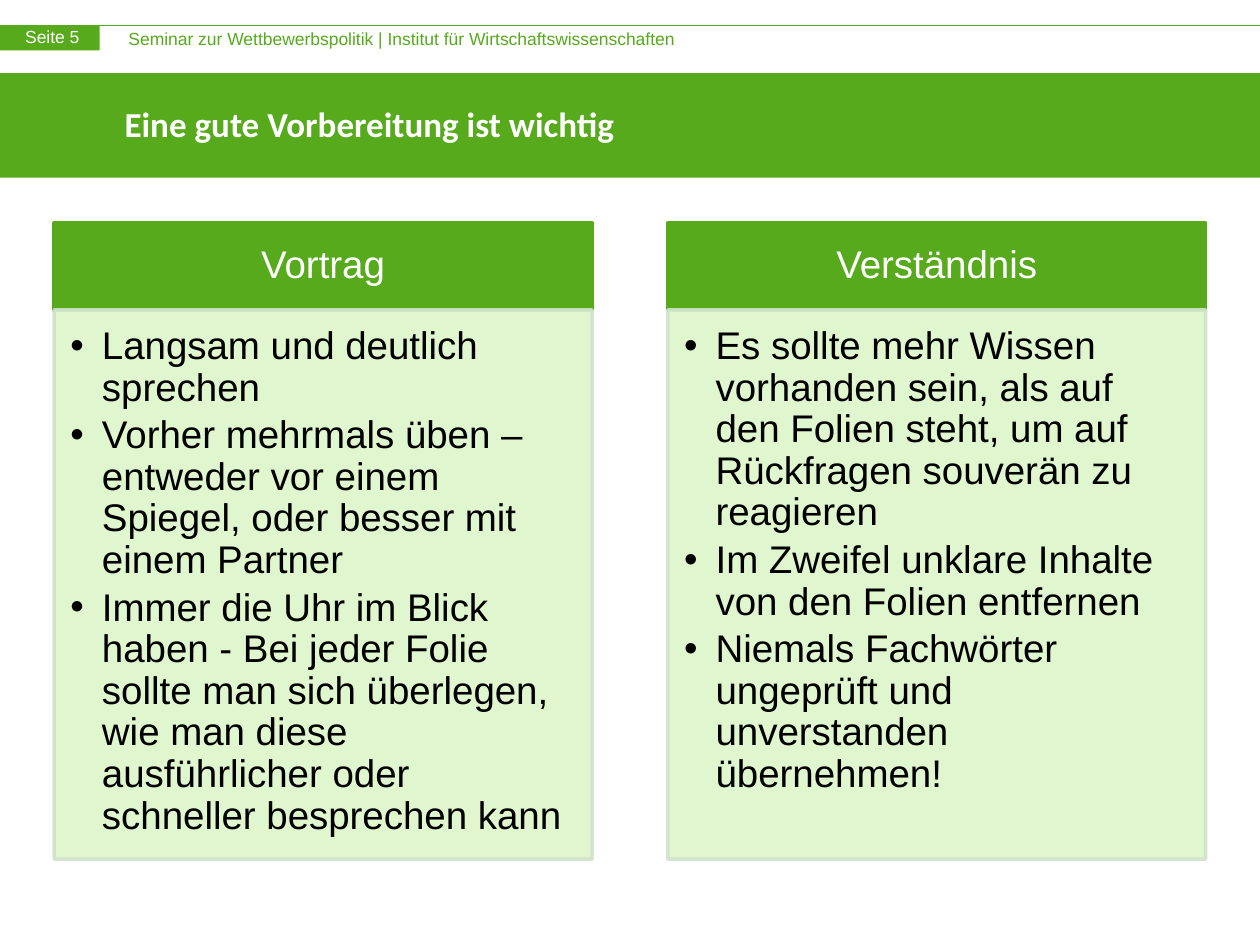
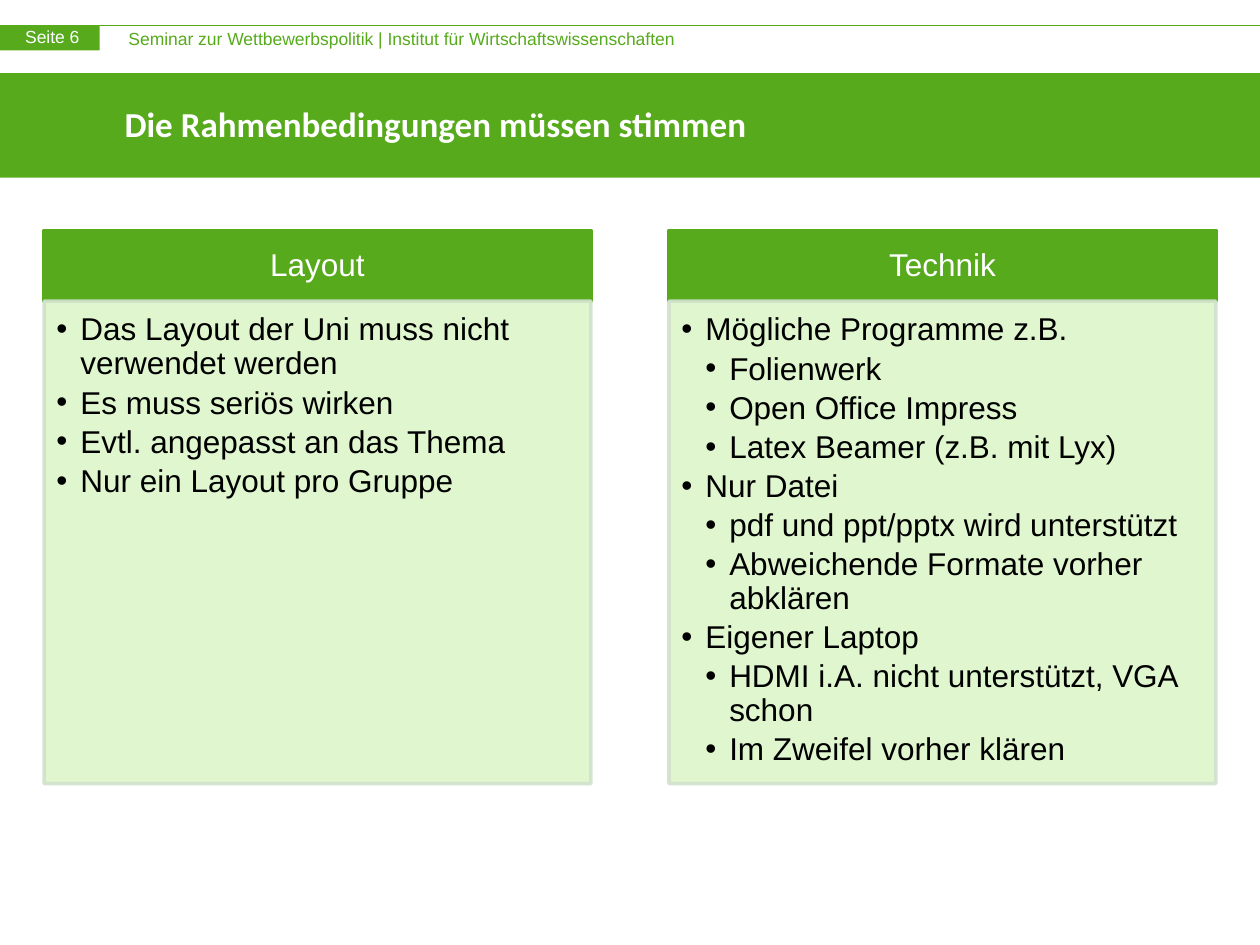
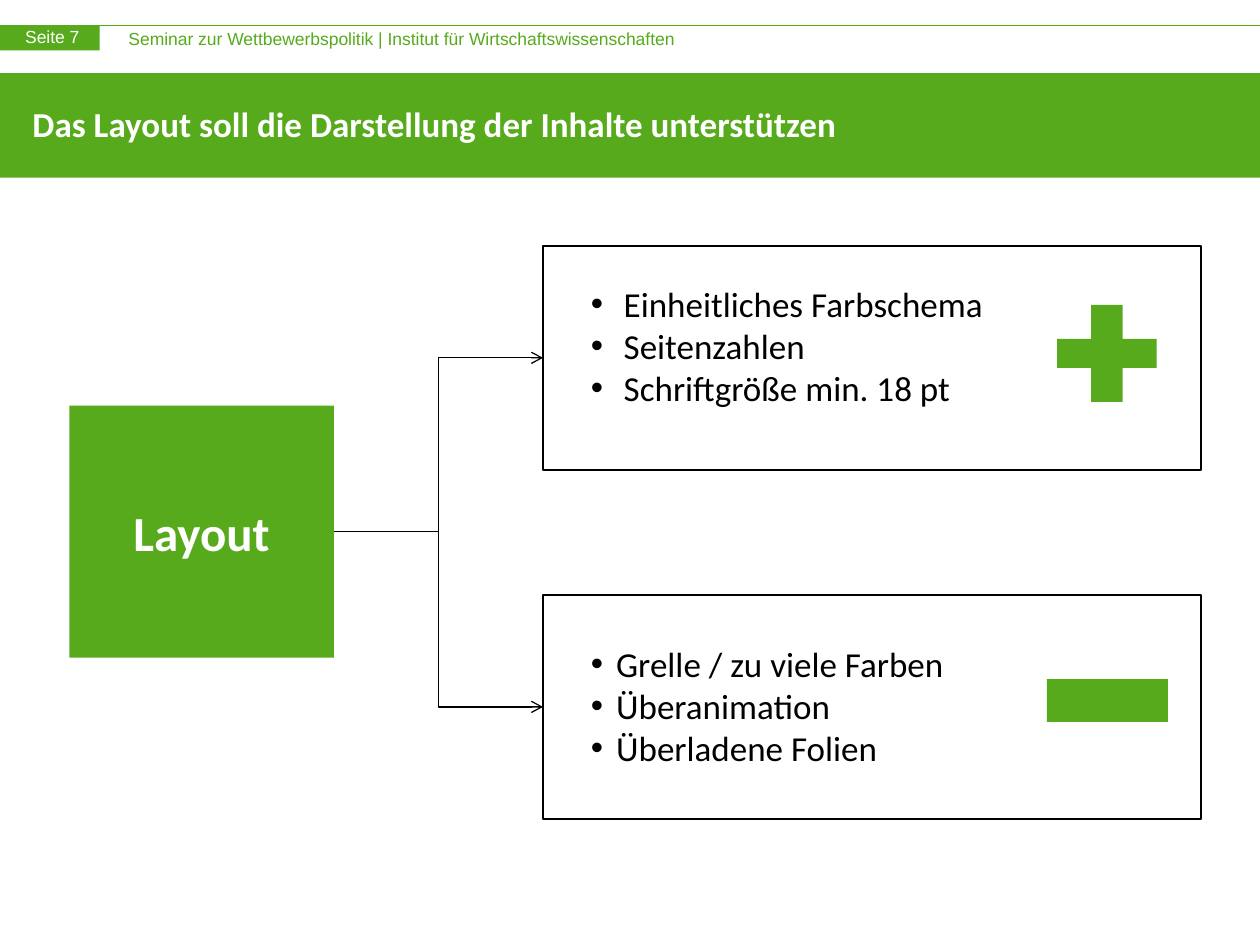
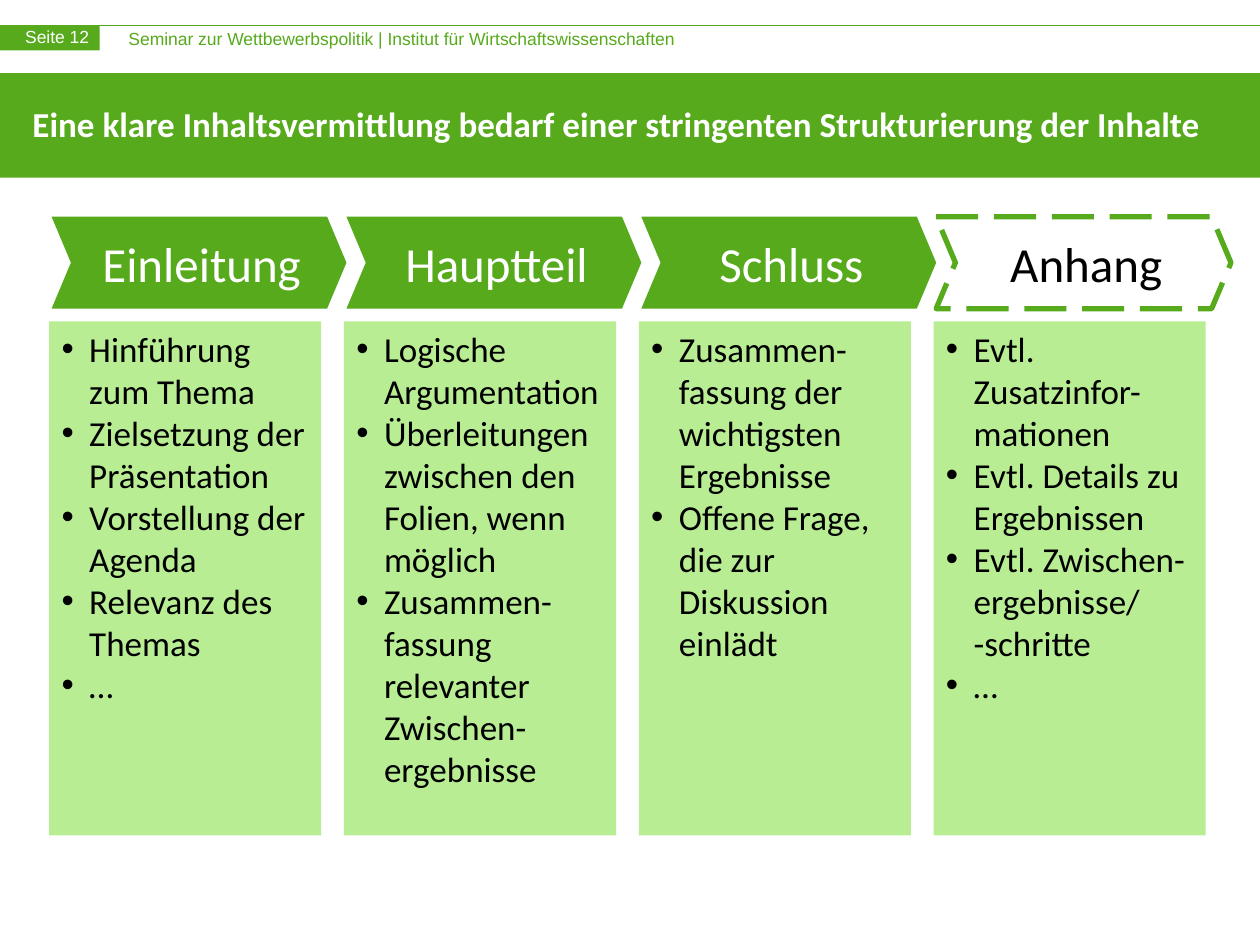
from lxml.etree import SubElement as Sub
from pptx import Presentation
from pptx.dml.color import RGBColor as Rgb
from pptx.enum.dml import MSO_LINE as Dash
from pptx.enum.shapes import MSO_CONNECTOR as Conn, MSO_SHAPE as Kind
from pptx.enum.text import MSO_ANCHOR as Anchor, MSO_AUTO_SIZE as Auto, PP_ALIGN as Align
from pptx.oxml.ns import qn
from pptx.util import Pt

PX = 9144
WIDE, HIGH = 1000, 750
HUES = {
    "green": "56AA1C", "pale": "DCF6C9", "edge": "D1E2CD",
    "lime": "B8ED94", "white": "FFFFFF", "black": "000000",
}
FOOT = "Seminar zur Wettbewerbspolitik | Institut für Wirtschaftswissenschaften"
SANS, HEAD = "Arial", "Calibri"


def emu(*nums):
    return [round(n * PX) for n in nums]


def hue(name):
    return Rgb.from_string(HUES[name])


def fade(node, part):
    tone = next(node.iter(qn("a:srgbClr")))
    Sub(tone, qn("a:alpha"), val=str(part * 1000))


def shape(slide, box, fill=None, line=None, width=1, kind=Kind.RECTANGLE):
    item = slide.shapes.add_shape(kind, *emu(*box))
    item.shadow.inherit = False
    if fill:
        item.fill.solid()
        item.fill.fore_color.rgb = hue(fill)
    else:
        item.fill.background()
    if line:
        item.line.color.rgb = hue(line)
        item.line.width = Pt(width)
    else:
        item.line.fill.background()
    return item


def link(slide, kind, start, end, tone):
    item = slide.shapes.add_connector(kind, *emu(*start, *end))
    item.line.color.rgb = hue(tone)
    item.line.width = Pt(0.75)
    Sub(item._element.spPr, qn("a:effectLst"))
    return item


def bullet(par, left, hang):
    props = par._p.get_or_add_pPr()
    props.set("marL", str(left * PX))
    props.set("indent", str(-hang * PX))
    Sub(props, qn("a:buFont"), typeface=SANS)
    Sub(props, qn("a:buChar"), char="•")


def write(item, lines, size, tone, font, pad=(0, 0, 0, 0), bold=False,
          align=Align.LEFT, anchor=Anchor.TOP, hang=0, space=None, after=0):
    frame = item.text_frame
    frame.word_wrap = True
    frame.vertical_anchor = anchor
    (frame.margin_left, frame.margin_top,
     frame.margin_right, frame.margin_bottom) = emu(*pad)
    for i, line in enumerate(lines):
        level, text = line if isinstance(line, tuple) else (0, line)
        par = frame.paragraphs[0] if i == 0 else frame.add_paragraph()
        par.text = text
        if hang:
            bullet(par, hang * max(level, 1), hang)
        par.level = level
        par.alignment = align
        if space:
            par.line_spacing = space
        if after:
            par.space_after = Pt(after)
        for run in par.runs:
            run.font.size = Pt(size)
            run.font.name = font
            run.font.bold = bold
            run.font.color.rgb = hue(tone)


def label(slide, box, lines, size, tone, font, **style):
    item = slide.shapes.add_textbox(*emu(*box))
    write(item, lines, size, tone, font, **style)
    return item


def page(deck, number, title, left):
    slide = deck.slides.add_slide(deck.slide_layouts[6])
    link(slide, Conn.STRAIGHT, (0, 20), (WIDE, 20), "green")
    shape(slide, (0, 20, 79, 20), "green")
    label(slide, (102, 22, 656, 17), [FOOT], 10, "green", SANS)
    label(slide, (20, 21, 62, 33), [f"Seite {number}"], 10, "white", SANS)
    shape(slide, (0, 58, WIDE, 83), "green")
    label(slide, (left, 62, WIDE - left, 72), [title], 20, "white", HEAD,
          pad=(10, 5, 10, 5), bold=True, anchor=Anchor.MIDDLE, space=Pt(24))
    return slide


def panel(slide, box, top, size, pad, hang, name, lines):
    x, y, w, h = box
    head = shape(slide, (x, y, w, top), "green", "green", 2)
    write(head, [name], size, "white", SANS, align=Align.CENTER,
          anchor=Anchor.MIDDLE, space=0.9)
    body = shape(slide, (x, y + top, w, h - top), "pale", "edge", 2)
    fade(body.fill._xPr.find(qn("a:solidFill")), 90)
    fade(body.line._ln, 90)
    write(body, lines, size, "black", SANS, pad=pad, hang=hang,
          space=0.9, after=size * 0.16)


def pair(slide, box, top, size, pad, hang, parts):
    x, y, w, h = box
    for left, (name, lines) in zip((x, WIDE - x - w), parts):
        panel(slide, (left, y, w, h), top, size, pad, hang, name, lines)


def choice(slide, box, root, hang, lines):
    x, y, w, h = box
    frame = shape(slide, box, None, "black")
    drop = (29, 38)[hang == 20]
    text = label(slide, (x + 38, y + drop, w - 61, 101), lines, 20, "black",
                 HEAD, hang=hang)
    text.text_frame.auto_size = Auto.SHAPE_TO_FIT_TEXT
    arm = link(slide, Conn.ELBOW, (265, 422), (x, y + h // 2), "black")
    arm.begin_connect(root, 3)
    arm.end_connect(frame, 1)
    Sub(arm.line._ln, qn("a:tailEnd"), type="arrow")


def tree(slide):
    root = shape(slide, (55, 322, 210, 200), "green")
    write(root, ["Layout"], 28, "white", HEAD, bold=True,
          align=Align.CENTER, anchor=Anchor.MIDDLE)
    choice(slide, (431, 195, 522, 178), root, 26,
           ["Einheitliches Farbschema", "Seitenzahlen", "Schriftgröße min. 18 pt"])
    choice(slide, (431, 472, 522, 178), root, 20,
           ["Grelle / zu viele Farben", "Überanimation", "Überladene Folien"])
    plus = shape(slide, (839, 242, 79, 77), "green", kind=Kind.CROSS)
    plus.adjustments[0] = 0.35
    shape(slide, (831, 539, 96, 34), "green")


def stage(slide, box, name, lines, extra):
    x, y, w, h = box
    body = shape(slide, (x, y + 83, w, h - 83), "lime")
    write(body, lines, 20, "black", HEAD, pad=(10, 5, 10, 5), hang=22)
    fill, line, tone = (None, "green", "black") if extra else ("green", None, "white")
    head = shape(slide, (x + 2, y, w + 18, 73), fill, line, 3, Kind.CHEVRON)
    head.adjustments[0] = 0.21
    if extra:
        head.line.dash_style = Dash.LONG_DASH
    write(head, [name], 28, tone, HEAD, pad=(14, 5, 10, 5),
          align=Align.CENTER, anchor=Anchor.MIDDLE)


def flow(slide, parts):
    for i, (name, lines) in enumerate(parts):
        stage(slide, (39 + 234 * i, 172, 216, 491), name, lines, name == "Anhang")


TALK = [
    ("Vortrag", [
        (1, "Langsam und deutlich sprechen"),
        (1, "Vorher mehrmals üben – entweder vor einem Spiegel, oder besser mit einem Partner"),
        (1, "Immer die Uhr im Blick haben - Bei jeder Folie sollte man sich überlegen, "
            "wie man diese ausführlicher oder schneller besprechen kann"),
    ]),
    ("Verständnis", [
        (1, "Es sollte mehr Wissen vorhanden sein, als auf den Folien steht, "
            "um auf Rückfragen souverän zu reagieren"),
        (1, "Im Zweifel unklare Inhalte von den Folien entfernen"),
        (1, "Niemals Fachwörter ungeprüft und unverstanden übernehmen!"),
    ]),
]
TOOLS = [
    ("Layout", [
        (1, "Das Layout der Uni muss nicht verwendet werden"),
        (1, "Es muss seriös wirken"),
        (1, "Evtl. angepasst an das Thema"),
        (1, "Nur ein Layout pro Gruppe"),
    ]),
    ("Technik", [
        (1, "Mögliche Programme z.B."),
        (2, "Folienwerk"),
        (2, "Open Office Impress"),
        (2, "Latex Beamer (z.B. mit Lyx)"),
        (1, "Nur Datei"),
        (2, "pdf und ppt/pptx wird unterstützt"),
        (2, "Abweichende Formate vorher abklären"),
        (1, "Eigener Laptop"),
        (2, "HDMI i.A. nicht unterstützt, VGA schon"),
        (2, "Im Zweifel vorher klären"),
    ]),
]
STEPS = [
    ("Einleitung", ["Hinführung zum Thema", "Zielsetzung der Präsentation",
                    "Vorstellung der Agenda", "Relevanz des Themas", "…"]),
    ("Hauptteil", ["Logische Argumentation",
                   "Überleitungen zwischen den Folien, wenn möglich",
                   "Zusammen-fassung relevanter Zwischen-ergebnisse"]),
    ("Schluss", ["Zusammen-fassung der wichtigsten Ergebnisse",
                 "Offene Frage, die zur Diskussion einlädt"]),
    ("Anhang", ["Evtl. Zusatzinfor-mationen", "Evtl. Details zu Ergebnissen",
                "Evtl. Zwischen-ergebnisse/\v-schritte", "…"]),
]


def main():
    deck = Presentation()
    deck.slide_width, deck.slide_height = emu(WIDE, HIGH)
    pair(page(deck, 5, "Eine gute Vorbereitung ist wichtig", 89),
         (43, 177, 427, 505), 69, 22, (13, 13, 17, 19), 25, TALK)
    pair(page(deck, 6, "Die Rahmenbedingungen müssen stimmen", 89),
         (35, 183, 434, 439), 56, 18, (10, 10, 14, 16), 19, TOOLS)
    tree(page(deck, 7, "Das Layout soll die Darstellung der Inhalte unterstützen", 16))
    flow(page(deck, 12, "Eine klare Inhaltsvermittlung bedarf einer stringenten "
                        "Strukturierung der Inhalte", 16), STEPS)
    deck.save("out.pptx")


if __name__ == "__main__":
    main()
